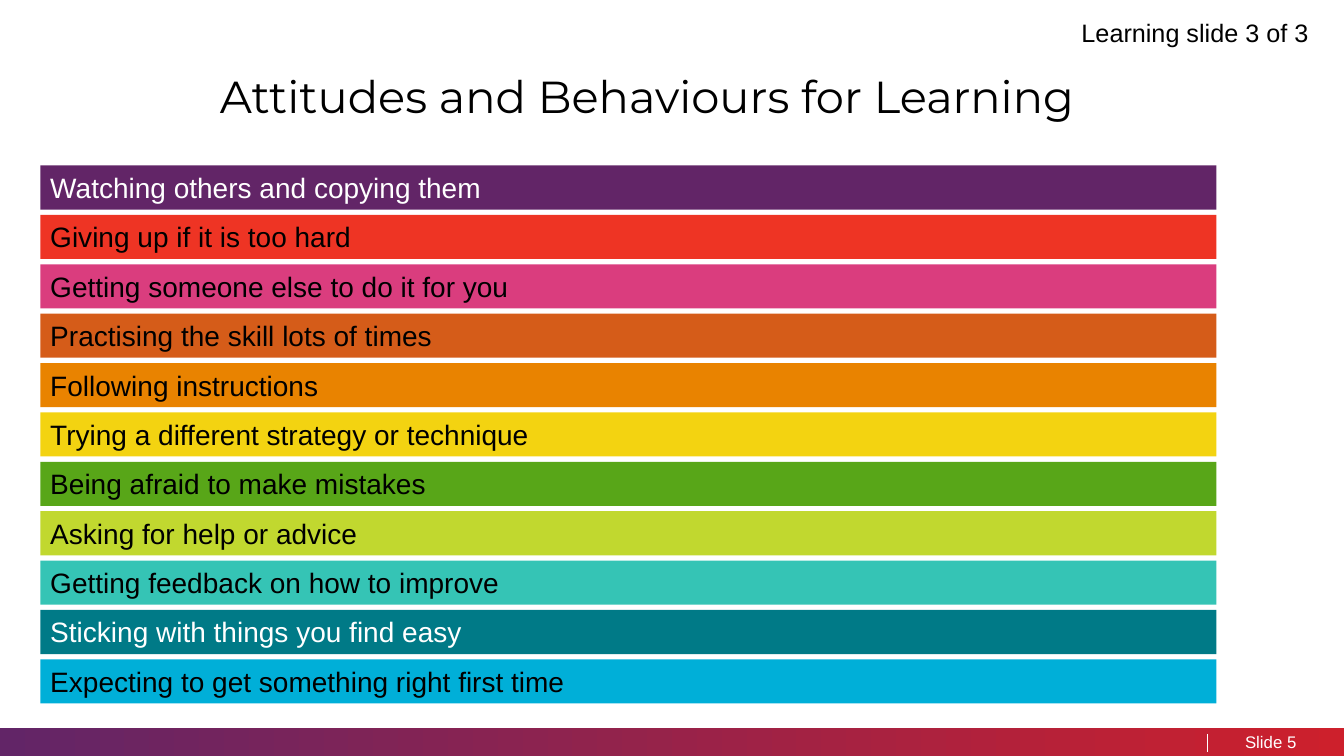
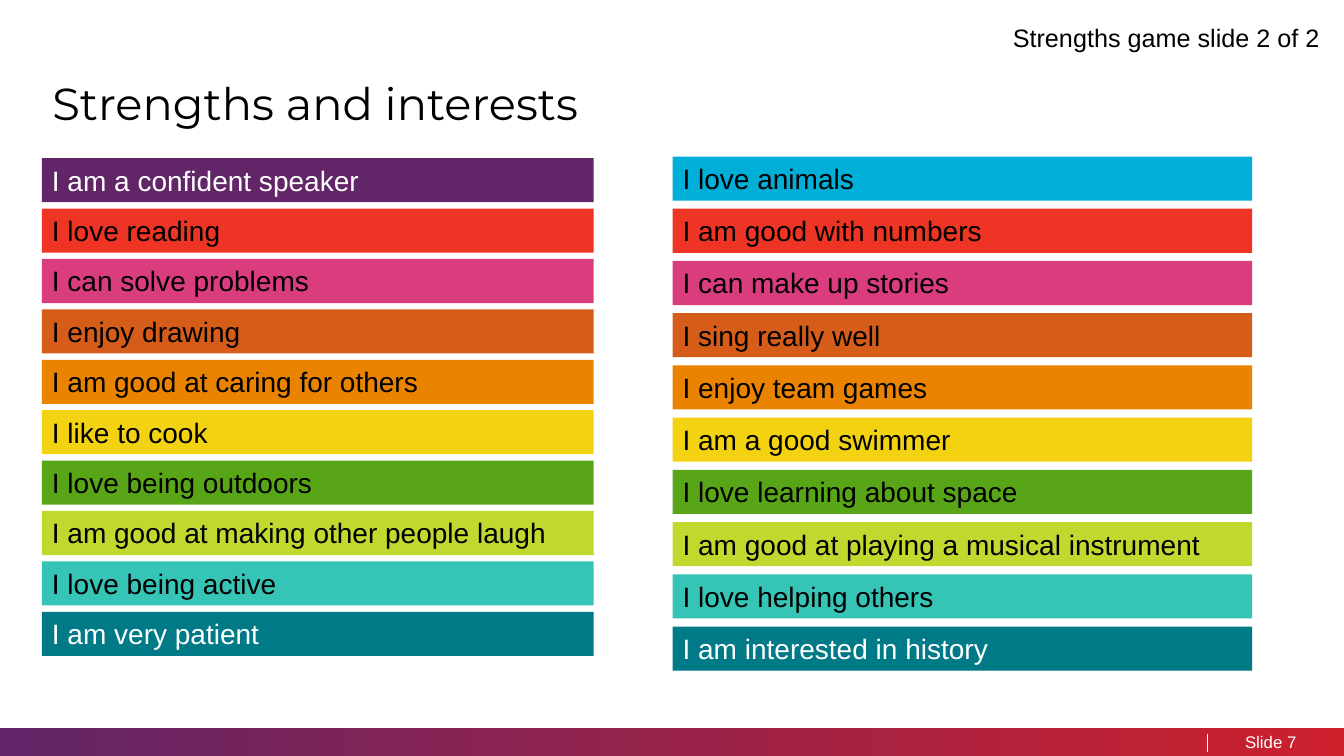
"""Build two colour-banded discussion slides about learning and strengths."""
import dataclasses

import pptx
import pptx.dml.color
import pptx.enum.shapes
import pptx.enum.text
import pptx.oxml
import pptx.oxml.ns
import pptx.util

Pt = pptx.util.Pt
ALIGN = pptx.enum.text.PP_ALIGN
ANCHOR = pptx.enum.text.MSO_ANCHOR


@dataclasses.dataclass(frozen=True)
class Theme:
    """Colours, fonts, type sizes and shared measures in points."""
    black: str = "000000"
    white: str = "FFFFFF"
    purple: str = "622567"
    red: str = "EE3424"
    pink: str = "DA3D7E"
    rust: str = "D55C19"
    orange: str = "E98300"
    yellow: str = "F3D311"
    green: str = "58A618"
    lime: str = "C1D82F"
    turquoise: str = "35C4B5"
    teal: str = "007A87"
    blue: str = "00AFD8"
    crimson: str = "CD202C"
    body_font: str = "Arial"
    title_font: str = "Montserrat"
    title_size: float = 32
    bar_size: float = 20
    label_size: float = 18
    footer_size: float = 12
    page_width: float = 960
    page_height: float = 540
    bar_height: float = 31.5
    footer_height: float = 20.16


THEME = Theme()
MIDDLE_COLOURS = [THEME.red, THEME.pink, THEME.rust, THEME.orange, THEME.yellow,
                  THEME.green, THEME.lime, THEME.turquoise, THEME.teal]
DARK_COLOURS = (THEME.purple, THEME.teal)

ATTITUDES = [
    "Watching others and copying them",
    "Giving up if it is too hard",
    "Getting someone else to do it for you",
    "Practising the skill lots of times",
    "Following instructions",
    "Trying a different strategy or technique",
    "Being afraid to make mistakes",
    "Asking for help or advice",
    "Getting feedback on how to improve",
    "Sticking with things you find easy",
    "Expecting to get something right first time",
]
STRENGTHS = [
    "I am a confident speaker",
    "I love reading",
    "I can solve problems",
    "I enjoy drawing",
    "I am good at caring for others",
    "I like to cook",
    "I love being outdoors",
    "I am good at making other people laugh",
    "I love being active",
    "I am very patient",
]
INTERESTS = [
    "I love animals",
    "I am good with numbers",
    "I can make up stories",
    "I sing really well",
    "I enjoy team games",
    "I am a good swimmer",
    "I love learning about space",
    "I am good at playing a musical instrument",
    "I love helping others",
    "I am interested in history",
]


def rgb(colour):
    """Turn a hex string into a colour object."""
    return pptx.dml.color.RGBColor.from_string(colour)


def write_text(shape, text, *, size, font=THEME.body_font, colour=THEME.black,
               align=ALIGN.LEFT, anchor=ANCHOR.TOP, insets=(7.2, 3.6),
               spacing=None):
    """Write one formatted paragraph into a shape."""
    frame = shape.text_frame
    frame.word_wrap = True
    frame.vertical_anchor = anchor
    frame.margin_left = frame.margin_right = Pt(insets[0])
    frame.margin_top = frame.margin_bottom = Pt(insets[1])
    para = frame.paragraphs[0]
    para.alignment = align
    if spacing:
        para.line_spacing = spacing
    span = para.add_run()
    span.text = text
    span.font.size = Pt(size)
    span.font.name = font
    span.font.color.rgb = rgb(colour)


def add_text(page, text, left, top, width, height, **text_format):
    """Add a text box."""
    box = page.shapes.add_textbox(Pt(left), Pt(top), Pt(width), Pt(height))
    write_text(box, text, **text_format)


def add_rectangle(page, left, top, width, height):
    """Add a rectangle without outline or shadow."""
    shape = page.shapes.add_shape(pptx.enum.shapes.MSO_SHAPE.RECTANGLE,
                                  Pt(left), Pt(top), Pt(width), Pt(height))
    shape.shadow.inherit = False
    shape.line.fill.background()
    return shape


def add_bars(page, texts, colours, *, left, top, width, pitch):
    """Stack labelled colour bars at an equal pitch."""
    for row, (text, colour) in enumerate(zip(texts, colours)):
        bar = add_rectangle(page, left, top + row * pitch, width, THEME.bar_height)
        bar.fill.solid()
        bar.fill.fore_color.rgb = rgb(colour)
        write_text(bar, text, size=THEME.bar_size,
                   colour=THEME.white if colour in DARK_COLOURS else THEME.black)


def add_footer(page, number):
    """Add the gradient band, divider and slide number."""
    top = THEME.page_height - THEME.footer_height
    band = add_rectangle(page, 0, top, THEME.page_width, THEME.footer_height)
    band.fill.gradient()
    band.fill.gradient_angle = 0
    for stop, colour in zip(band.fill.gradient_stops, (THEME.purple, THEME.crimson)):
        stop.color.rgb = rgb(colour)

    divider = page.shapes.add_connector(pptx.enum.shapes.MSO_CONNECTOR.STRAIGHT,
                                        Pt(862.5), Pt(524.2), Pt(862.5), Pt(537))
    divider.line.color.rgb = rgb(THEME.white)
    divider.line.width = Pt(1)
    properties = divider.element.find(pptx.oxml.ns.qn("p:spPr"))
    properties.append(pptx.oxml.parse_xml(
        f'<a:effectLst {pptx.oxml.ns.nsdecls("a")}/>'))

    for text, left, width, align in (("Slide", 876, 40, ALIGN.RIGHT),
                                     (str(number), 919.4, 23.8, ALIGN.LEFT)):
        add_text(page, text, left, top, width, THEME.footer_height,
                 size=THEME.footer_size, colour=THEME.white, align=align,
                 anchor=ANCHOR.MIDDLE, insets=(0, 3.6))


def add_page(deck, number, *, title, title_box, label, label_box):
    """Add a blank page with footer, title and corner label."""
    page = deck.slides.add_slide(deck.slide_layouts[6])
    add_footer(page, number)
    add_text(page, title, *title_box, size=THEME.title_size,
             font=THEME.title_font, insets=(0, 0), spacing=1.3)
    add_text(page, label, *label_box, size=THEME.label_size)
    return page


def main():
    """Build and save the deck."""
    deck = pptx.Presentation()
    deck.slide_width = Pt(THEME.page_width)
    deck.slide_height = Pt(THEME.page_height)

    page = add_page(deck, 5, title="Attitudes and Behaviours for Learning",
                    title_box=(157, 37.4, 702.7, 96.5),
                    label="Learning slide 3 of 3",
                    label_box=(765.4, 8.6, 194.6, 29))
    add_bars(page, ATTITUDES, [THEME.purple, *MIDDLE_COLOURS, THEME.blue],
             left=28.8, top=118.2, width=840, pitch=35.28)

    page = add_page(deck, 7, title="Strengths and interests",
                    title_box=(37.4, 42.5, 433.4, 70.6),
                    label="Strengths game slide 2 of 2",
                    label_box=(716.4, 12.2, 243.6, 29))
    add_bars(page, STRENGTHS, [THEME.purple, *MIDDLE_COLOURS],
             left=30, top=113, width=394, pitch=36)
    add_bars(page, INTERESTS, [THEME.blue, *MIDDLE_COLOURS],
             left=480.5, top=111.8, width=414, pitch=37.3)

    deck.save("out.pptx")


if __name__ == "__main__":
    main()
